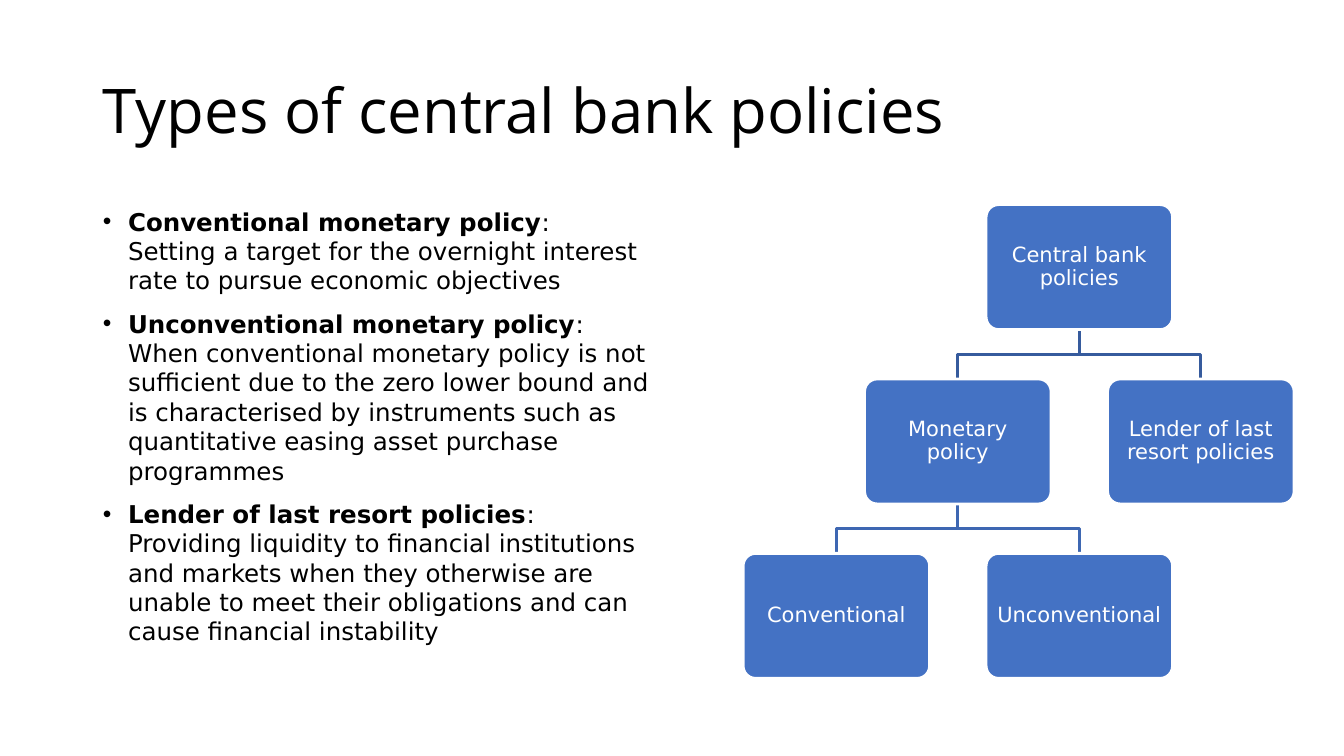
from lxml import etree
from pptx import Presentation
from pptx.dml.color import RGBColor
from pptx.enum.shapes import MSO_SHAPE as Shape
from pptx.enum.text import MSO_ANCHOR as Anchor, MSO_AUTO_SIZE as AutoSize, PP_ALIGN as Align
from pptx.oxml.ns import qn
from pptx.util import Inches, Pt

TITLE = "Types of central bank policies"
POLICIES = [
    ("Conventional monetary policy",
     "Setting a target for the overnight interest rate to pursue economic objectives"),
    ("Unconventional monetary policy",
     "When conventional monetary policy is not sufficient due to the zero lower bound and is "
     "characterised by instruments such as quantitative easing asset purchase programmes"),
    ("Lender of last resort policies",
     "Providing liquidity to financial institutions and markets when they otherwise are unable "
     "to meet their obligations and can cause financial instability"),
]
# Chart boxes: text -> (column in half steps, row)
BOXES = {
    "Central bank policies": (2, 0),
    "Monetary policy": (1, 1),
    "Lender of last resort policies": (3, 1),
    "Conventional": (0, 2),
    "Unconventional": (2, 2),
}
LINKS = [
    ("Central bank policies", "Monetary policy"),
    ("Central bank policies", "Lender of last resort policies"),
    ("Monetary policy", "Conventional"),
    ("Monetary policy", "Unconventional"),
]

BLACK = RGBColor(0x00, 0x00, 0x00)
WHITE = RGBColor(0xFF, 0xFF, 0xFF)
BOX_BLUE = RGBColor(0x44, 0x72, 0xC4)
LINK_BLUES = [RGBColor(0x36, 0x5B, 0x9D), RGBColor(0x3E, 0x67, 0xB2)]
TITLE_FONT, TEXT_FONT = "Open Sans", "DejaVu Sans"

CHART_LEFT, CHART_TOP = 7.37, 2.03
COLUMN_STEP, ROW_STEP = 2.41 / 2, 1.73
BOX_WIDTH, BOX_HEIGHT = 1.85, 1.24


def box_corner(name):
    column, row = BOXES[name]
    return CHART_LEFT + column * COLUMN_STEP, CHART_TOP + row * ROW_STEP


def place(shape, left, top, width, height):
    shape.left, shape.top = Inches(left), Inches(top)
    shape.width, shape.height = Inches(width), Inches(height)


def set_font(paragraph, name, size, color):
    font = paragraph.font
    font.name, font.size, font.color.rgb = name, Pt(size), color


def add_bullet(paragraph):
    properties = paragraph._p.get_or_add_pPr()
    properties.set("marL", str(Inches(0.25)))
    properties.set("indent", str(-Inches(0.25)))
    # The bullet elements stand before the default run properties
    font = etree.Element(qn("a:buFont"), typeface="Arial")
    character = etree.Element(qn("a:buChar"), char="•")
    default_run = properties.find(qn("a:defRPr"))
    default_run.addprevious(font)
    default_run.addprevious(character)


def add_link(slide, parent, child):
    parent_left, parent_top = box_corner(parent)
    child_left, child_top = box_corner(child)
    start_x, end_x = parent_left + BOX_WIDTH / 2, child_left + BOX_WIDTH / 2
    start_y = parent_top + BOX_HEIGHT
    middle_y = (start_y + child_top) / 2
    builder = slide.shapes.build_freeform(Inches(start_x), Inches(start_y))
    corners = [(start_x, middle_y), (end_x, middle_y), (end_x, child_top)]
    builder.add_line_segments([(Inches(x), Inches(y)) for x, y in corners], close=False)
    link = builder.convert_to_shape()
    link.shadow.inherit = False
    link.fill.background()
    link.line.color.rgb = LINK_BLUES[BOXES[parent][1]]
    link.line.width = Pt(2)


def add_box(slide, name):
    left, top = box_corner(name)
    box = slide.shapes.add_shape(Shape.ROUNDED_RECTANGLE, Inches(left), Inches(top),
                                 Inches(BOX_WIDTH), Inches(BOX_HEIGHT))
    box.adjustments[0] = 0.1
    box.shadow.inherit = False
    box.fill.solid()
    box.fill.fore_color.rgb = BOX_BLUE
    box.line.color.rgb = WHITE
    box.line.width = Pt(2)
    frame = box.text_frame
    frame.word_wrap = True
    frame.vertical_anchor = Anchor.MIDDLE
    frame.margin_left = frame.margin_right = Inches(0.06)
    paragraph = frame.paragraphs[0]
    paragraph.text = name
    paragraph.alignment = Align.CENTER
    paragraph.line_spacing = 0.9
    set_font(paragraph, TEXT_FONT, 15, WHITE)


def main():
    presentation = Presentation()
    presentation.slide_width, presentation.slide_height = Inches(13.33), Inches(7.5)
    slide = presentation.slides.add_slide(presentation.slide_layouts[1])

    # Title
    title = slide.shapes.title
    place(title, 0.92, 0.4, 10.52, 1.45)
    title.text_frame.auto_size = AutoSize.NONE
    title.text_frame.vertical_anchor = Anchor.MIDDLE
    heading = title.text_frame.paragraphs[0]
    heading.text = TITLE
    heading.alignment = Align.LEFT
    heading.line_spacing = 0.9
    set_font(heading, TITLE_FONT, 44, BLACK)

    # Policy list
    body = slide.placeholders[1]
    place(body, 0.92, 2, 5.75, 4.76)
    frame = body.text_frame
    frame.auto_size = AutoSize.NONE
    for index, (term, meaning) in enumerate(POLICIES):
        paragraph = frame.add_paragraph() if index else frame.paragraphs[0]
        term_run = paragraph.add_run()
        term_run.text = term
        term_run.font.bold = True
        paragraph.add_run().text = ": "
        paragraph.add_line_break()
        paragraph.add_run().text = meaning
        paragraph.line_spacing = 1.0
        paragraph.space_before = Pt(10 if index else 0)
        set_font(paragraph, TEXT_FONT, 17.5, BLACK)
        add_bullet(paragraph)

    # Policy tree
    for parent, child in LINKS:
        add_link(slide, parent, child)
    for name in BOXES:
        add_box(slide, name)

    presentation.save("out.pptx")


if __name__ == "__main__":
    main()
